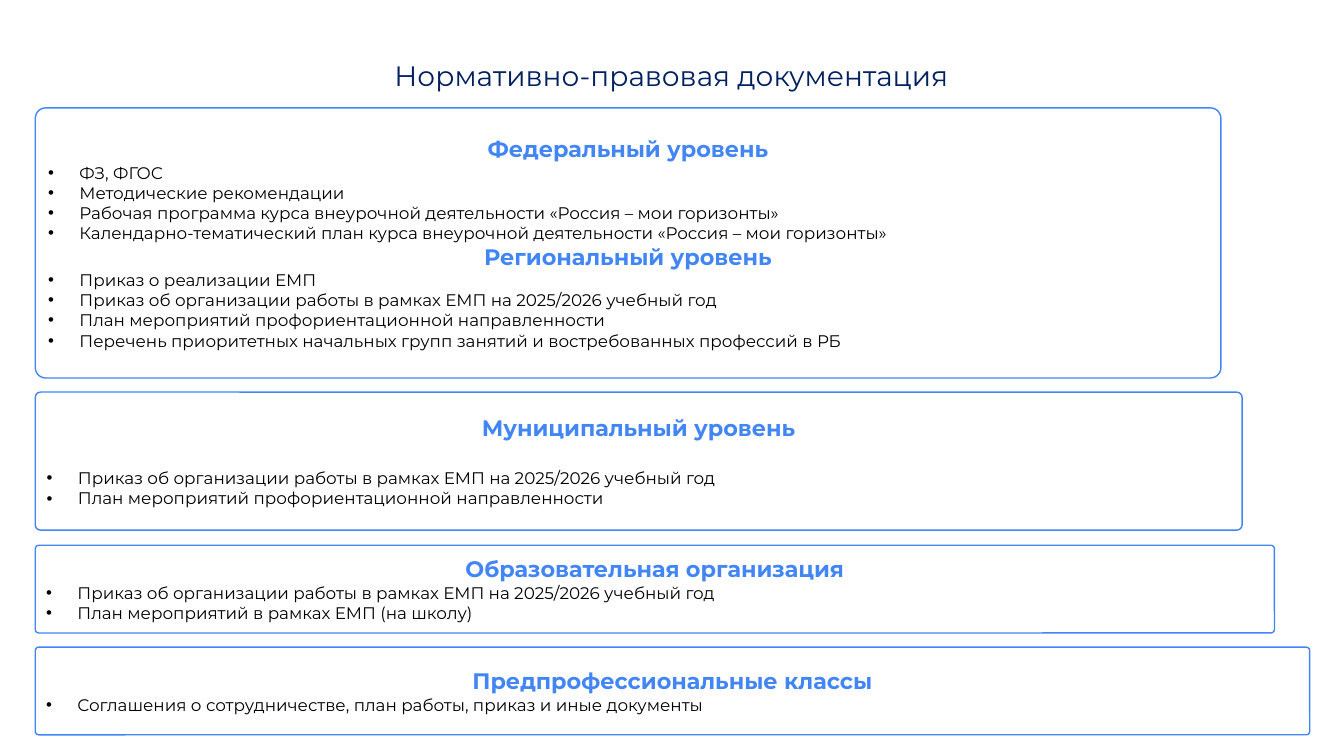
from lxml import etree
from pptx import Presentation
from pptx.dml import color
from pptx.enum import shapes, text
from pptx.oxml import ns
from pptx.util import Inches, Pt

FONT = "Montserrat"
BLUE, NAVY, BLACK = "4285F4", "002060", "000000"
HEADING = {"name": FONT, "size": Pt(16), "bold": True}
ITEM = {"name": FONT, "size": Pt(12), "bold": False}
TITLE = {"name": FONT, "size": Pt(20), "bold": False}
LEFT = 0.35
INDENT = Inches(0.31)

WORK_ORDER = "Приказ об организации работы в рамках ЕМП на 2025/2026 учебный год"
CAREER_PLAN = "План мероприятий профориентационной направленности"

LEVELS = [
    (1.07, 11.76, 2.68, 0, [
        ("Федеральный уровень", [
            "ФЗ, ФГОС",
            "Методические рекомендации",
            "Рабочая программа курса внеурочной деятельности «Россия – мои горизонты»",
            "Календарно-тематический план курса внеурочной деятельности «Россия – мои горизонты»",
        ]),
        ("Региональный уровень", [
            "Приказ о реализации ЕМП",
            WORK_ORDER,
            CAREER_PLAN,
            "Перечень приоритетных начальных групп занятий и востребованных профессий в РБ",
        ]),
    ]),
    (3.89, 11.97, 1.37, 19.5, [
        ("Муниципальный уровень", [WORK_ORDER, CAREER_PLAN]),
    ]),
    (5.41, 12.29, 0.87, 0, [
        ("Образовательная организация", [
            WORK_ORDER,
            "План мероприятий в рамках ЕМП (на школу)",
        ]),
    ]),
    (6.42, 12.64, 0.87, 0, [
        ("Предпрофессиональные классы", [
            "Соглашения о сотрудничестве, план работы, приказ и иные документы",
        ]),
    ]),
]


def paint(target, hex_color):
    target.rgb = color.RGBColor.from_string(hex_color)


def write(paragraph, words, style, hex_color, align):
    paragraph.alignment = align
    run = paragraph.add_run()
    run.text = words
    for key, value in style.items():
        setattr(run.font, key, value)
    paint(run.font.color, hex_color)


def add_bullet(paragraph):
    props = paragraph._p.get_or_add_pPr()
    props.set("marL", str(INDENT))
    props.set("indent", str(-INDENT))
    etree.SubElement(props, ns.qn("a:buFont"), typeface="Arial")
    etree.SubElement(props, ns.qn("a:buChar"), char="•")


def add_title(slide, left, top, width, height):
    title = slide.shapes.title
    title.left, title.top = Inches(left), Inches(top)
    title.width, title.height = Inches(width), Inches(height)
    frame = title.text_frame
    frame.auto_size = text.MSO_AUTO_SIZE.NONE
    frame.vertical_anchor = text.MSO_ANCHOR.MIDDLE
    heading = frame.paragraphs[0]
    heading.line_spacing = 0.9
    write(heading, "Нормативно-правовая документация", TITLE, NAVY, text.PP_ALIGN.CENTER)


def add_level(slide, left, top, width, height, heading_gap, sections):
    panel = slide.shapes.add_shape(
        shapes.MSO_SHAPE.ROUNDED_RECTANGLE,
        Inches(left), Inches(top), Inches(width), Inches(height))
    panel.adjustments[0] = 0.039
    panel.shadow.inherit = False
    panel.fill.background()
    paint(panel.line.color, BLUE)
    panel.line.width = Pt(1)
    frame = panel.text_frame
    frame.word_wrap = True
    frame.vertical_anchor = text.MSO_ANCHOR.MIDDLE
    for number, (name, documents) in enumerate(sections):
        heading = frame.add_paragraph() if number else frame.paragraphs[0]
        write(heading, name, HEADING, BLUE, text.PP_ALIGN.CENTER)
        if heading_gap:
            heading.space_after = Pt(heading_gap)
        for document in documents:
            item = frame.add_paragraph()
            add_bullet(item)
            write(item, document, ITEM, BLACK, text.PP_ALIGN.LEFT)


def main():
    deck = Presentation()
    deck.slide_width, deck.slide_height = Inches(13.33), Inches(7.5)
    slide = deck.slides.add_slide(deck.slide_layouts[5])
    add_title(slide, 1.99, 0.4, 9.34, 0.74)
    for top, width, height, heading_gap, sections in LEVELS:
        add_level(slide, LEFT, top, width, height, heading_gap, sections)
    deck.save("out.pptx")


if __name__ == "__main__":
    main()
